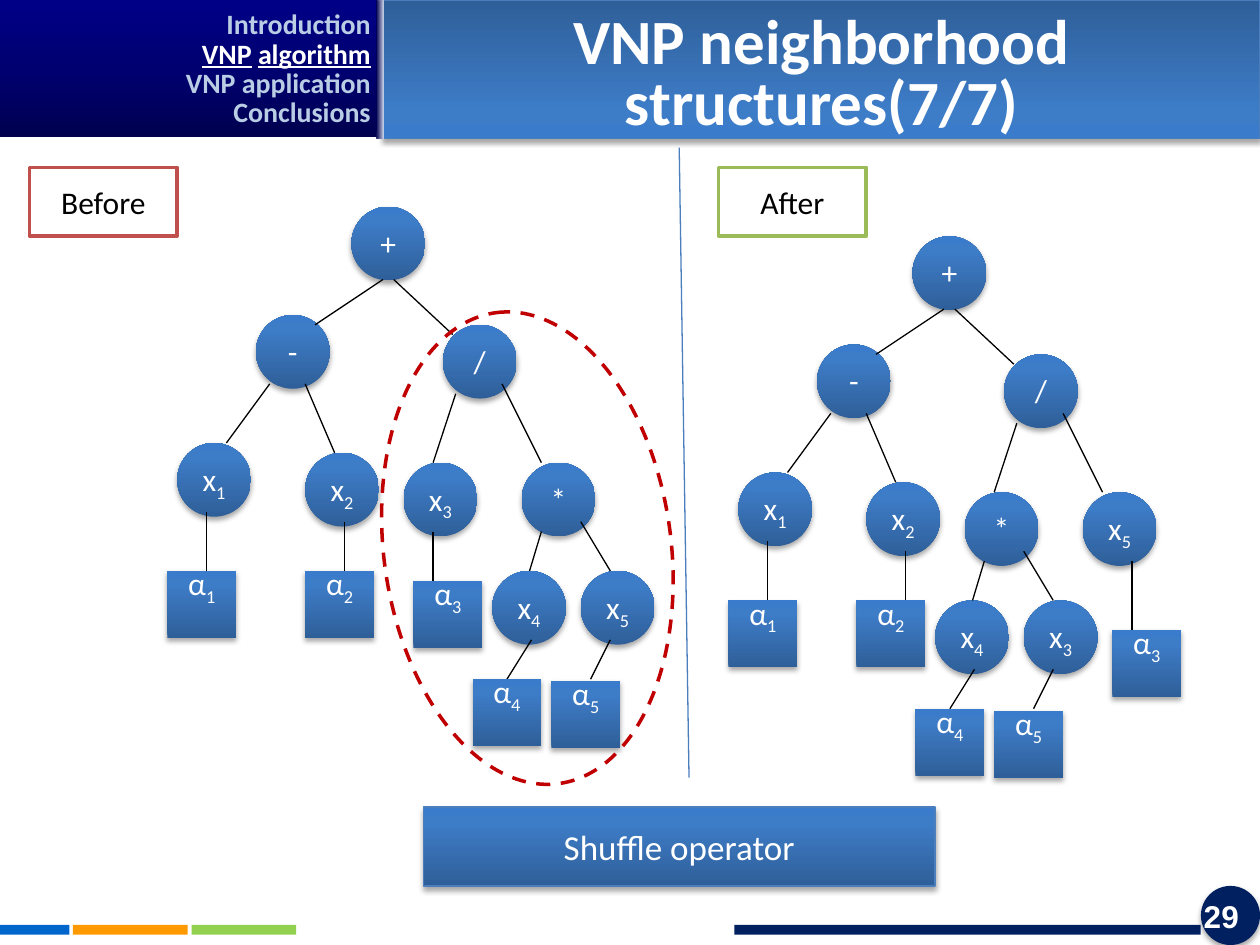
from dataclasses import dataclass

from lxml import etree
from pptx import Presentation
from pptx.dml.color import RGBColor
from pptx.enum.dml import MSO_LINE
from pptx.enum.shapes import MSO_CONNECTOR, MSO_SHAPE
from pptx.enum.text import MSO_ANCHOR, PP_ALIGN
from pptx.oxml.ns import qn
from pptx.util import Emu, Inches, Pt

RECT, OVAL = MSO_SHAPE.RECTANGLE, MSO_SHAPE.OVAL
STRAIGHT, DASH = MSO_CONNECTOR.STRAIGHT, MSO_LINE.DASH
TOP, MIDDLE = MSO_ANCHOR.TOP, MSO_ANCHOR.MIDDLE
CENTER, RIGHT = PP_ALIGN.CENTER, PP_ALIGN.RIGHT
WIDTH, HEIGHT = Inches(10), Inches(7.5)
COLUMNS = 128
WHITE, BLACK, NAVY, EDGE_BLUE, PALE = "FFFFFF", "000000", "002060", "4B7EBC", "B9CDE5"
BLUES = ((0, "2F5F99", 100), (80, "3D7CC7", 100), (100, "3A7CCB", 100))
NAVIES = ((0, "00004F", 100), (50, "000071", 100), (100, "000086", 100))
FADE = ((16, "000051", 88), (100, "E1E8F5", 100))
NODE, LEAF_W, LEAF_H = 7.5, 7, 6.8


@dataclass(frozen=True)
class Box:
    col: float
    row: float
    cols: float
    rows: float


@dataclass(frozen=True)
class Run:
    text: str
    color: str = WHITE
    size: float = 18
    bold: bool = False
    underline: bool = False
    subscript: bool = False
    font: str = "Calibri"


@dataclass(frozen=True)
class Node:
    name: str
    col: float
    row: float


@dataclass(frozen=True)
class Edge:
    col1: float
    row1: float
    col2: float
    row2: float


@dataclass(frozen=True)
class Leaf:
    name: str
    col: float
    row: float
    edge: Edge
    joined: bool = False


@dataclass(frozen=True)
class Tree:
    col: float
    row: float
    lone: Node
    swapped: str
    branch_shift: float
    leaf2_col: float
    leaf3_col: float
    leaf3_row: float
    stem3_col: float


def grid(n: float) -> Emu:
    return Emu(round(WIDTH * n / COLUMNS))


def rgb(color: str) -> RGBColor:
    return RGBColor.from_string(color)


def place(box: Box) -> list[Emu]:
    return [grid(n) for n in (box.col, box.row, box.cols, box.rows)]


def set_gradient(sp, stops, angle: int) -> None:
    sp.fill.gradient()
    grad = sp._element.spPr.find(qn("a:gradFill"))
    for child in list(grad):
        grad.remove(child)
    gs_list = etree.SubElement(grad, qn("a:gsLst"))
    for pos, color, alpha in stops:
        gs = etree.SubElement(gs_list, qn("a:gs"), pos=str(pos * 1000))
        clr = etree.SubElement(gs, qn("a:srgbClr"), val=color)
        etree.SubElement(clr, qn("a:alpha"), val=str(alpha * 1000))
    etree.SubElement(grad, qn("a:lin"), ang=str(angle * 60000), scaled="0")


def set_shadow(sp) -> None:
    effects = sp._element.spPr.find(qn("a:effectLst"))
    shadow = etree.SubElement(effects, qn("a:outerShdw"), blurRad=str(Pt(3.1)),
                              dist=str(Pt(1.8)), dir="5400000", rotWithShape="0")
    clr = etree.SubElement(shadow, qn("a:srgbClr"), val=BLACK)
    etree.SubElement(clr, qn("a:alpha"), val="35000")


def add_shape(s, kind, box: Box, fill=None, angle: int = 270, line: str = "",
              width: float = 0.75, shadow: bool = False):
    sp = s.shapes.add_shape(kind, *place(box))
    if fill is None:
        sp.fill.background()
    elif isinstance(fill, str):
        sp.fill.solid()
        sp.fill.fore_color.rgb = rgb(fill)
    else:
        set_gradient(sp, fill, angle)
    if line:
        sp.line.color.rgb = rgb(line)
        sp.line.width = Pt(width)
    else:
        sp.line.fill.background()
    sp.shadow.inherit = False
    if shadow:
        set_shadow(sp)
    return sp


def write(sp, lines: list[list[Run]], align=CENTER, anchor=MIDDLE, wrap: bool = True,
          spacing: float = 1, gap: float = 0) -> None:
    tf = sp.text_frame
    tf.word_wrap = wrap
    tf.vertical_anchor = anchor
    for i, runs in enumerate(lines):
        p = tf.add_paragraph() if i else tf.paragraphs[0]
        p.alignment = align
        p.line_spacing = spacing
        p.space_before = Pt(gap if i else 0)
        for run in runs:
            r = p.add_run()
            r.text = run.text
            r.font.name = run.font
            r.font.size = Pt(run.size)
            r.font.bold = run.bold
            r.font.underline = run.underline
            r.font.color.rgb = rgb(run.color)
            if run.subscript:
                r.font._element.set("baseline", "-25000")


def add_text(s, box: Box, lines: list[list[Run]], **layout) -> None:
    write(s.shapes.add_textbox(*place(box)), lines, **layout)


def add_line(s, edge: Edge, color: str = BLACK):
    ends = (edge.col1, edge.row1, edge.col2, edge.row2)
    line = s.shapes.add_connector(STRAIGHT, *[grid(n) for n in ends])
    line.line.color.rgb = rgb(color)
    line.line.width = Pt(0.75)
    etree.SubElement(line._element.spPr, qn("a:effectLst"))
    return line


def label(name: str) -> list[Run]:
    runs = [Run(name[0])]
    if name[1:]:
        runs.append(Run(name[1:], subscript=True))
    return runs


def draw_tree(s, tree: Tree) -> None:
    def moved(edge: Edge) -> Edge:
        return Edge(edge.col1 + tree.col, edge.row1 + tree.row,
                    edge.col2 + tree.col, edge.row2 + tree.row)

    b = tree.branch_shift
    nodes = [Node("+", 35.7, 21), Node("-", 26, 32), Node("/", 45, 33),
             Node("x1", 18, 45), Node("x2", 31, 46), tree.lone,
             Node("*", 53 + b, 47), Node("x4", 50 + b, 58), Node(tree.swapped, 59 + b, 58)]
    edges = [Edge(32, 33, 38.9, 28.4), Edge(46, 34, 40, 28.4),
             Edge(23, 45, 27.4, 39), Edge(34, 46, 31, 39),
             Edge(44, 47, 46.3, 40), Edge(55, 47, 51, 39),
             Edge(55 + b, 54, 53.8 + b, 58), Edge(62 + b, 58, 59 + b, 53)]
    leaves = [Leaf("α1", 17, 58, Edge(21, 52, 21, 59)),
              Leaf("α2", tree.leaf2_col, 58, Edge(35, 53, 35, 60)),
              Leaf("α3", tree.leaf3_col, tree.leaf3_row,
                   Edge(tree.stem3_col, 54, tree.stem3_col, 61)),
              Leaf("α4", 48 + b, 69, Edge(54 + b, 65, 51.5 + b, 69), True),
              Leaf("α5", 56 + b, 69.2, Edge(62 + b, 65, 60 + b, 69))]
    for node in nodes:
        box = Box(node.col + tree.col, node.row + tree.row, NODE, NODE)
        sp = add_shape(s, OVAL, box, BLUES, shadow=True)
        write(sp, [label(node.name)], anchor=TOP, wrap=False)
    for edge in edges:
        add_line(s, moved(edge))
    for leaf in leaves:
        stem = add_line(s, moved(leaf.edge))
        box = Box(leaf.col + tree.col, leaf.row + tree.row, LEAF_W, LEAF_H)
        sp = add_shape(s, RECT, box, BLUES, shadow=True)
        write(sp, [label(leaf.name)])
        sp.text_frame.margin_top = 0
        sp.text_frame.margin_bottom = Inches(0.3)
        if leaf.joined:
            stem.end_connect(sp, 0)


def draw_frame(s) -> None:
    add_shape(s, RECT, Box(0, 0, 38.27, 13.95), NAVIES)
    add_shape(s, RECT, Box(38.78, 0, 89.22, 14.08), BLUES, 90, EDGE_BLUE, shadow=True)
    add_text(s, Box(39.94, 1.02, 87.04, 13.7),
             [[Run("VNP neighborhood structures(7/7)", size=36, bold=True)]],
             anchor=TOP, spacing=0.8)
    add_shape(s, RECT, Box(31.62, 6.66, 13.95, 0.77), FADE, 90).rotation = 270
    add_shape(s, OVAL, Box(122, 90, 6, 6), NAVY, shadow=True)
    add_text(s, Box(120.06, 90, 7.04, 6), [[Run("29", bold=True, font="Arial")]], align=RIGHT)
    for col, cols, color in ((74.62, 47.36, NAVY), (19.46, 10.62, "92D050"),
                             (0, 7.04, "0066CC"), (7.42, 11.65, "FF9900")):
        add_shape(s, RECT, Box(col, 93.95, cols, 1.02), color)
    menu = [[("Introduction", False)], [("VNP", True), (" ", False), ("algorithm", True)],
            [("VNP application", False)], [("Conclusions", False)]]
    lines = [[Run(text, WHITE if active else PALE, 16, True, active) for text, active in item]
             for item in menu]
    add_text(s, Box(14.98, 1.02, 23.94, 13.06), lines, align=RIGHT, anchor=TOP,
             spacing=0.7, gap=3.2)


def main() -> None:
    prs = Presentation()
    prs.slide_width, prs.slide_height = WIDTH, HEIGHT
    s = prs.slides.add_slide(prs.slide_layouts[6])
    draw_frame(s)
    draw_tree(s, Tree(0, 0, Node("x3", 41, 47), "x5", 0, 31, 42, 59, 44))
    operator = add_shape(s, RECT, Box(43, 82, 52, 8), BLUES, line=EDGE_BLUE, shadow=True)
    write(operator, [[Run("Shuffle operator", size=20)]])
    subtree = add_shape(s, OVAL, Box(29.44, 41.09, 48.26, 29.18), line="C00000", width=2)
    subtree.rotation = 82.4
    subtree.line.dash_style = DASH
    add_line(s, Edge(69, 15, 70, 79), EDGE_BLUE)
    for text, col, color in (("Before", 3, "C0504D"), ("After", 73, "9BBB59")):
        sp = add_shape(s, RECT, Box(col, 17, 15, 7), WHITE, line=color, width=2)
        write(sp, [[Run(text, BLACK)]])
    draw_tree(s, Tree(57, 3, Node("x5", 53, 47), "x3", -12, 30, 56, 61, 58))
    prs.save("out.pptx")


if __name__ == "__main__":
    main()
